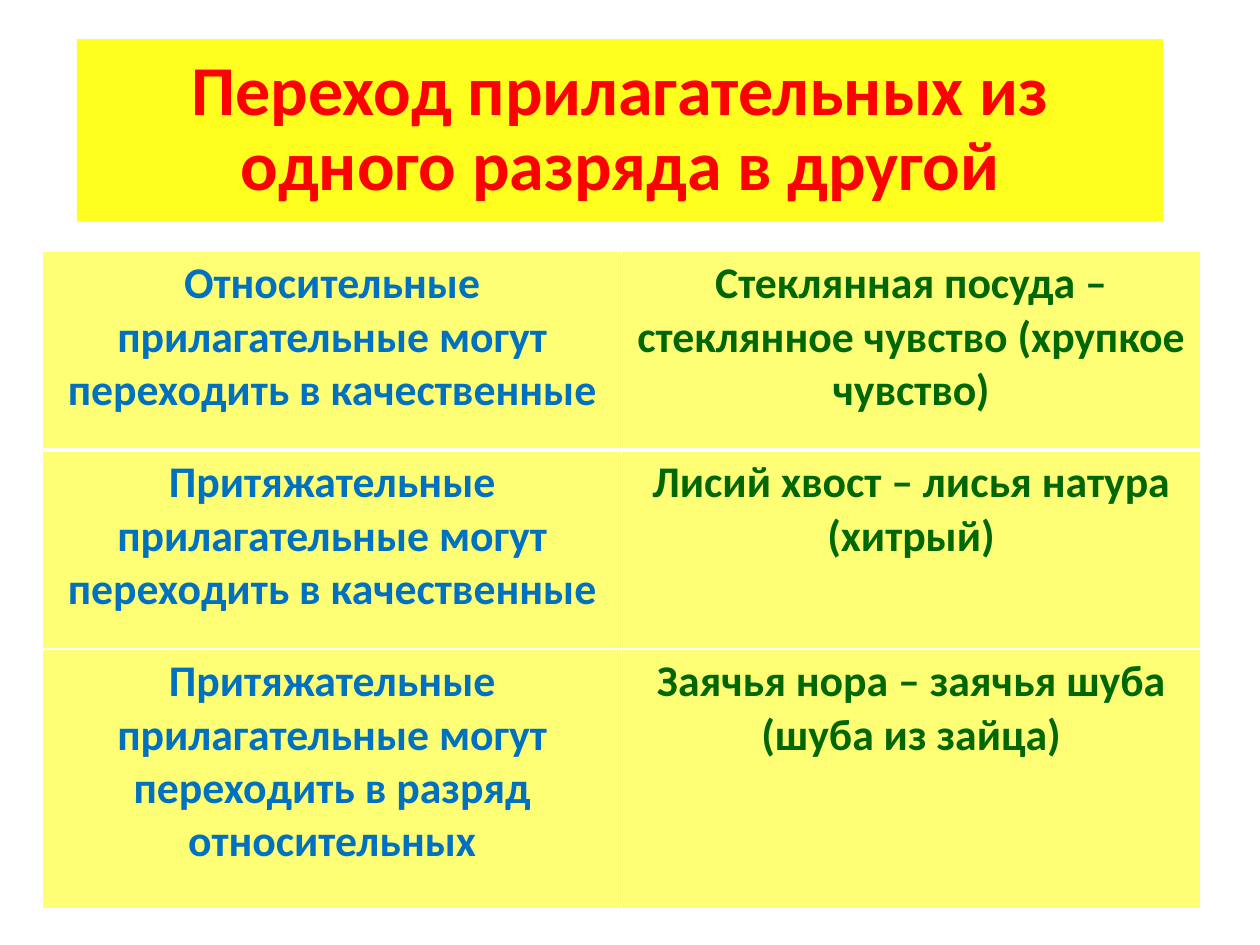
from lxml import etree
from pptx import Presentation
from pptx.dml.color import RGBColor
from pptx.enum.text import MSO_ANCHOR, PP_ALIGN
from pptx.oxml.ns import qn
from pptx.util import Cm, Pt

CENTER = PP_ALIGN.CENTER
MIDDLE = MSO_ANCHOR.MIDDLE
YELLOW = RGBColor(0xFF, 0xFF, 0x00)
RED = RGBColor(0xFF, 0x00, 0x00)
BLUE = RGBColor(0x00, 0x70, 0xC0)
GREEN = RGBColor(0x01, 0x67, 0x03)
WHITE = RGBColor(0xFF, 0xFF, 0xFF)

ROWS = [
    ("Относительные прилагательные могут переходить в качественные",
     "Стеклянная посуда – стеклянное чувство (хрупкое чувство)"),
    ("Притяжательные прилагательные могут переходить в качественные",
     "Лисий хвост – лисья натура (хитрый)"),
    ("Притяжательные прилагательные могут переходить в разряд относительных",
     "Заячья нора – заячья шуба (шуба из зайца)"),
]
ROW_HEIGHTS = [Cm(4.01), Cm(4.01), Cm(5.23)]
COLUMN_WIDTH = Cm(11.67)


def fill_yellow(fill, properties, opacity):
    """Fill with yellow; opacity is in percent."""
    fill.solid()
    fill.fore_color.rgb = YELLOW
    color = properties.find(qn("a:solidFill")).find(qn("a:srgbClr"))
    etree.SubElement(color, qn("a:alpha"), val=str(opacity * 1000))


def format_text(text_frame, size, color):
    para = text_frame.paragraphs[0]
    para.alignment = CENTER
    font = para.runs[0].font
    font.name = "Calibri"
    font.size = Pt(size)
    font.bold = True
    font.color.rgb = color


deck = Presentation()
deck.slide_width, deck.slide_height = Cm(25.4), Cm(19.05)
page = deck.slides.add_slide(deck.slide_layouts[5])

title = page.shapes.title
title.left, title.top, title.width, title.height = Cm(1.55), Cm(0.79), Cm(21.9), Cm(3.68)
fill_yellow(title.fill, title.element.spPr, 88)
title.text_frame.text = "Переход прилагательных из одного разряда в другой"
title.text_frame.vertical_anchor = MIDDLE
title.text_frame.paragraphs[0].line_spacing = 0.9
format_text(title.text_frame, 40, RED)

table = page.shapes.add_table(len(ROWS), 2, Cm(0.86), Cm(5.06),
                              2 * COLUMN_WIDTH, sum(ROW_HEIGHTS)).table
for column in table.columns:
    column.width = COLUMN_WIDTH

for row_index, texts in enumerate(ROWS):
    table.rows[row_index].height = ROW_HEIGHTS[row_index]
    # The rule below the first row is heavier than the others.
    border_widths = {
        "lnL": 1,
        "lnR": 1,
        "lnT": 3 if row_index == 1 else 1,
        "lnB": 3 if row_index == 0 else 1,
    }
    for column_index, (text, color) in enumerate(zip(texts, (BLUE, GREEN))):
        cell = table.cell(row_index, column_index)
        cell.text_frame.text = text
        format_text(cell.text_frame, 25, color)
        properties = cell._tc.get_or_add_tcPr()
        for side, width in border_widths.items():
            line = etree.SubElement(properties, qn(f"a:{side}"), w=str(Pt(width)))
            line_fill = etree.SubElement(line, qn("a:solidFill"))
            etree.SubElement(line_fill, qn("a:srgbClr"), val=str(WHITE))
        fill_yellow(cell.fill, properties, 54)

deck.save("out.pptx")
